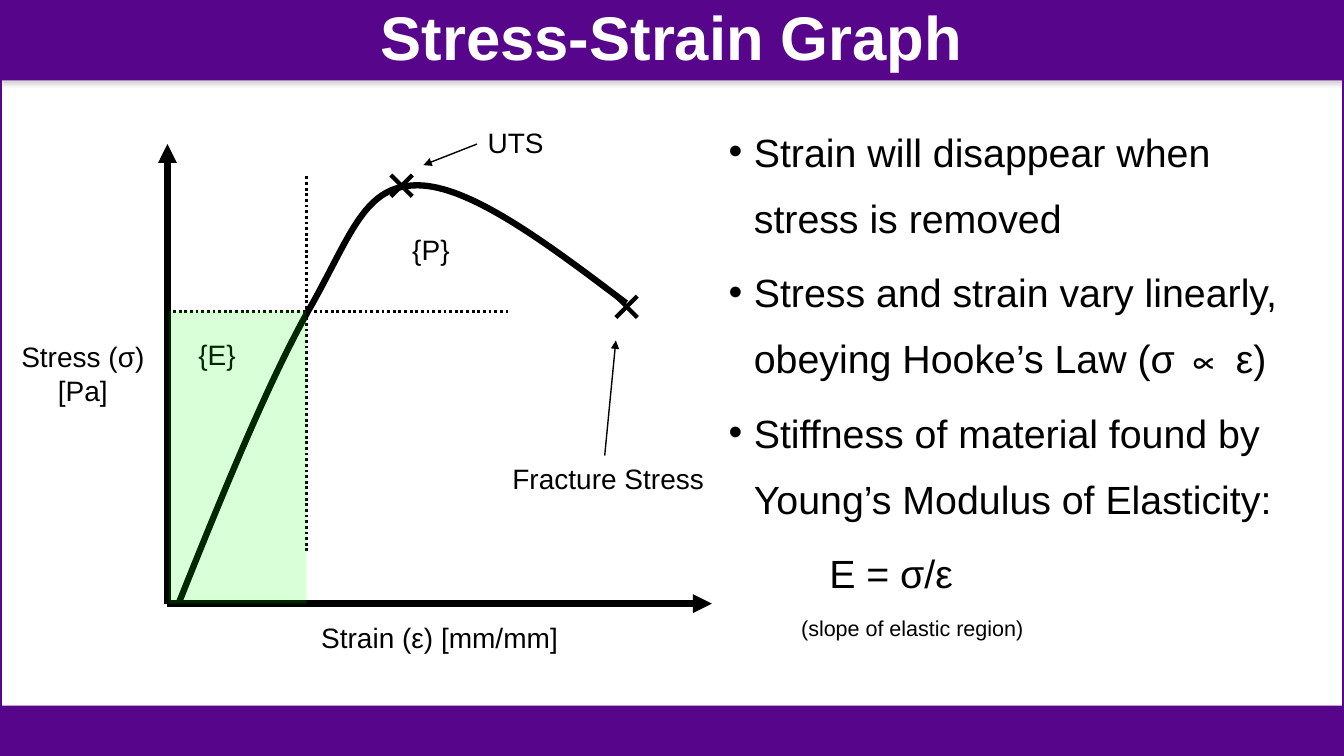
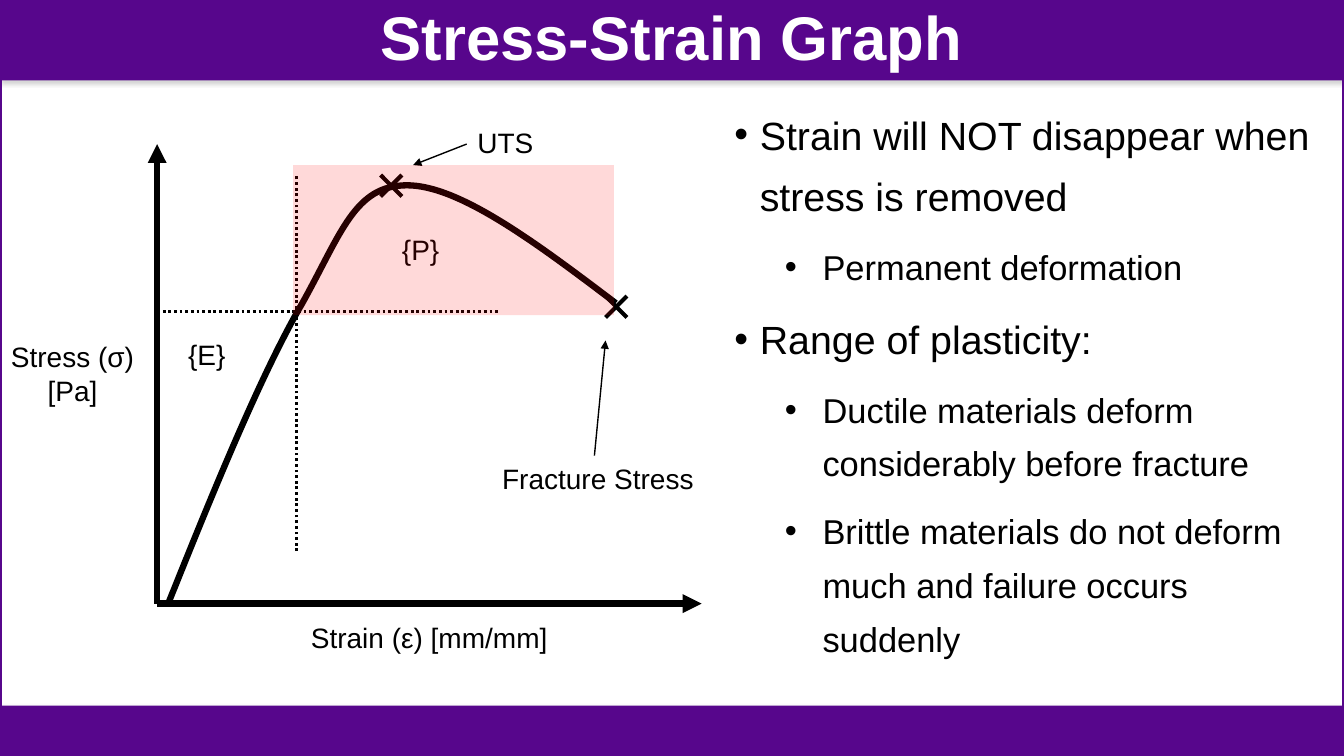
from dataclasses import dataclass

from lxml import etree
from pptx import Presentation
from pptx.dml.color import RGBColor
from pptx.enum import dml, shapes, text
from pptx.oxml.ns import qn
from pptx.util import Cm, Pt


@dataclass(frozen=True)
class Theme:
    purple: str = "57068C"
    white: str = "FFFFFF"
    ink: str = "000000"
    shade: str = "808080"
    elastic: str = "00FF00"
    plastic: str = "FF0000"
    font: str = "Arial"
    title: float = 44
    point: float = 28.1
    subpoint: float = 24.6
    label: float = 20
    note: float = 15.4
    axis_line: float = 4.5
    cross_line: float = 3
    guide_line: float = 2
    arrow_line: float = 1


@dataclass(frozen=True)
class Level:
    size: float
    margin: float
    hang: float = 0


THEME = Theme()
WIDTH, HEIGHT = 33.87, 19.05
TITLE_HEIGHT, FOOTER_HEIGHT = 2.03, 1.27
AXIS_BOTTOM = 15.21

POINT = Level(THEME.point, 0.64, 0.64)
SUBPOINT = Level(THEME.subpoint, 2.22, 0.95)
FORMULA = Level(THEME.point, 2.54)
NOTE = Level(THEME.note, 1.83)

# Graph measures are centimetres right of and above the axis corner.
AXIS_LENGTH, AXIS_HEIGHT = 13.72, 11.58
YIELD_X, YIELD_Y = 3.51, 7.37
CURVE = [(0.28, 0), (1.45, 2.92), (2.64, 5.82), (3.66, 7.57), (4.65, 9.35),
         (4.98, 10.54), (6.3, 10.54), (7.62, 10.54), (9.58, 9.07), (11.56, 7.57)]
UTS, FRACTURE = (5.9, 10.53), (11.57, 7.48)
CROSS_ARM = 0.27
LABELS = [
    ("Strain (ε) [mm/mm]", 2.21, -0.3, 9.3, 1.12, True),
    ("Stress (σ) [Pa]", -3.96, 6.78, 3.66, 1.96, True),
    ("Fracture Stress", 7.92, 3.71, 6.38, 1.12, True),
    ("UTS", 7.82, 12.17, 2.1, 1.12, False),
    ("{P}", 5.92, 9.47, 1.85, 1.37, False),
    ("{E}", 0.53, 6.83, 1.85, 1.37, False),
]
ELASTIC_REGION = (0.03, YIELD_Y, 3.48, YIELD_Y, THEME.elastic)
PLASTIC_REGION = (3.43, 11.05, 8.08, 3.78, THEME.plastic)


def rgb(code):
    return RGBColor.from_string(code)


def add_xml(parent, tag, **attributes):
    return etree.SubElement(parent, qn(tag), attributes)


class Deck:
    def __init__(self, theme):
        self.theme = theme
        self.prs = Presentation()
        self.prs.slide_width, self.prs.slide_height = Cm(WIDTH), Cm(HEIGHT)

    def new_slide(self, title):
        self.slide = self.prs.slides.add_slide(self.prs.slide_layouts[6])
        self.canvas = self.slide.shapes
        self.band(0, TITLE_HEIGHT)
        frame = self.rectangle(0, 0, WIDTH, HEIGHT)
        frame.fill.background()
        frame.line.color.rgb = rgb(self.theme.purple)
        frame.line.width = Pt(2.25)
        self.band(HEIGHT - FOOTER_HEIGHT, FOOTER_HEIGHT)
        heading = self.text_box(0, 0, WIDTH, TITLE_HEIGHT)
        heading.vertical_anchor = text.MSO_ANCHOR.MIDDLE
        line = heading.paragraphs[0]
        self.set_text(line, title, self.theme.title, self.theme.white, centred=True)
        line.line_spacing = 0.9
        line.font.bold = True

    def rectangle(self, left, top, width, height, fill=None):
        box = self.canvas.add_shape(shapes.MSO_SHAPE.RECTANGLE,
                                    Cm(left), Cm(top), Cm(width), Cm(height))
        box.shadow.inherit = False
        if fill:
            box.fill.solid()
            box.fill.fore_color.rgb = rgb(fill)
            box.line.fill.background()
        return box

    def band(self, top, height):
        """Full-width purple bar with a soft shadow below it."""
        bar = self.rectangle(0, top, WIDTH, height, self.theme.purple)
        effects = bar.element.spPr.find(qn("a:effectLst"))
        shadow = add_xml(effects, "a:outerShdw", blurRad=str(Pt(3.1)),
                         dist=str(Pt(1.8)), dir="5400000", rotWithShape="0")
        shade = add_xml(shadow, "a:srgbClr", val=self.theme.shade)
        add_xml(shade, "a:alpha", val="35000")

    def text_box(self, left, top, width, height):
        frame = self.canvas.add_textbox(Cm(left), Cm(top), Cm(width), Cm(height)).text_frame
        frame.word_wrap = True
        return frame

    def set_text(self, paragraph, words, size, color, centred=False):
        paragraph.text = words
        paragraph.alignment = text.PP_ALIGN.CENTER if centred else text.PP_ALIGN.LEFT
        paragraph.font.name = self.theme.font
        paragraph.font.size = Pt(size)
        paragraph.font.color.rgb = rgb(color)

    def points(self, box, items, line_spacing, gap):
        frame = self.text_box(*box)
        for index, (level, words) in enumerate(items):
            paragraph = frame.add_paragraph() if index else frame.paragraphs[0]
            paragraph.line_spacing = line_spacing
            if index:
                paragraph.space_before = Pt(gap)
            properties = paragraph._p.get_or_add_pPr()
            properties.set("marL", str(Cm(level.margin)))
            properties.set("indent", str(-Cm(level.hang)))
            if level.hang:
                add_xml(properties, "a:buFont", typeface=self.theme.font)
                add_xml(properties, "a:buChar", char="•")
            else:
                add_xml(properties, "a:buNone")
            self.set_text(paragraph, words, level.size, self.theme.ink)

    def place(self, x, y):
        """Turn a graph position into a slide position in centimetres."""
        return self.axis_left + x, AXIS_BOTTOM - y

    def line(self, start, end, weight, dotted=False, arrow=False):
        ends = [Cm(value) for spot in (start, end) for value in self.place(*spot)]
        rule = self.canvas.add_connector(shapes.MSO_CONNECTOR.STRAIGHT, *ends)
        rule.line.color.rgb = rgb(self.theme.ink)
        rule.line.width = Pt(weight)
        if dotted:
            rule.line.dash_style = dml.MSO_LINE.ROUND_DOT
        properties = rule._element.spPr
        if arrow:
            add_xml(properties.find(qn("a:ln")), "a:tailEnd", type="triangle")
        add_xml(properties, "a:effectLst")

    def curve(self, knots):
        """Draw a cubic Bézier chain: a start, then three points per piece."""
        start, *rest = [tuple(Cm(value) for value in self.place(*knot)) for knot in knots]
        builder = self.canvas.build_freeform(*start)
        builder.add_line_segments(rest, close=False)
        bend = builder.convert_to_shape()
        bend.shadow.inherit = False
        bend.fill.background()
        bend.line.color.rgb = rgb(self.theme.ink)
        bend.line.width = Pt(self.theme.axis_line)
        outline = next(bend.element.iter(qn("a:path")))
        segments = outline.findall(qn("a:lnTo"))
        for first in range(0, len(segments), 3):
            piece = add_xml(outline, "a:cubicBezTo")
            for segment in segments[first:first + 3]:
                piece.append(segment[0])
                outline.remove(segment)

    def cross(self, x, y):
        for rise in (CROSS_ARM, -CROSS_ARM):
            self.line((x - CROSS_ARM, y + rise), (x + CROSS_ARM, y - rise),
                      self.theme.cross_line)

    def region(self, x, y, width, height, color):
        """Shade part of the graph with a see-through tint."""
        tint = self.rectangle(*self.place(x, y), width, height, color)
        add_xml(next(tint.element.spPr.iter(qn("a:srgbClr"))), "a:alpha", val="15000")

    def graph(self, axis_left):
        self.axis_left = axis_left
        self.canvas = self.slide.shapes.add_group_shape().shapes
        theme = self.theme
        self.curve(CURVE)
        for tip in ((AXIS_LENGTH, 0), (0, AXIS_HEIGHT)):
            self.line((0, 0), tip, theme.axis_line, arrow=True)
        self.line((0, YIELD_Y), (8.61, YIELD_Y), theme.guide_line, dotted=True)
        self.line((YIELD_X, 1.32), (YIELD_X, 10.8), theme.guide_line, dotted=True)
        for words, x, y, width, height, centred in LABELS:
            label = self.text_box(*self.place(x, y), width, height)
            self.set_text(label.paragraphs[0], words, theme.label, theme.ink, centred)
        for failure in (UTS, FRACTURE):
            self.cross(*failure)
        self.line((11.02, 3.73), (11.3, 6.63), theme.arrow_line, arrow=True)
        self.line((7.8, 11.58), (6.45, 11.05), theme.arrow_line, arrow=True)
        self.canvas = self.slide.shapes


def main():
    deck = Deck(THEME)

    deck.new_slide("Stress-Strain Graph")
    deck.graph(4.22)
    deck.points((18.11, 2.62, 14.58, 14.48), [
        (POINT, "Strain will disappear when stress is removed"),
        (POINT, "Stress and strain vary linearly, obeying Hooke’s Law (σ ∝ ε)"),
        (POINT, "Stiffness of material found by Young’s Modulus of Elasticity:"),
        (FORMULA, "E = σ/ε"),
        (NOTE, "(slope of elastic region)"),
    ], line_spacing=1.4, gap=6)
    deck.region(*ELASTIC_REGION)

    deck.new_slide("Stress-Strain Graph")
    deck.graph(3.96)
    deck.points((18.26, 2.31, 15.6, 15.27), [
        (POINT, "Strain will NOT disappear when stress is removed"),
        (SUBPOINT, "Permanent deformation"),
        (POINT, "Range of plasticity:"),
        (SUBPOINT, "Ductile materials deform considerably before fracture"),
        (SUBPOINT, "Brittle materials do not deform much and failure occurs suddenly"),
    ], line_spacing=1.3, gap=10)
    deck.region(*PLASTIC_REGION)

    deck.prs.save("out.pptx")


if __name__ == "__main__":
    main()
